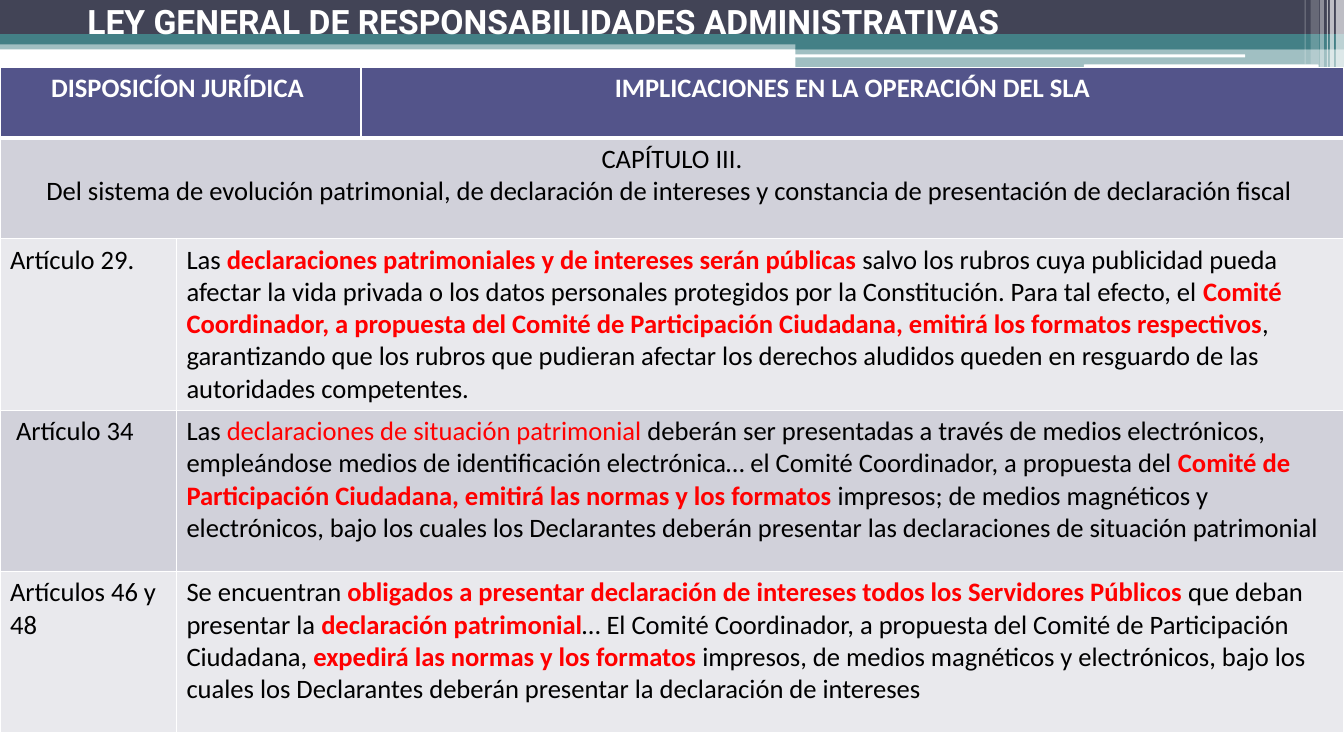
import pptx
import pptx.dml.color
import pptx.enum.shapes
import pptx.enum.text
import pptx.oxml
import pptx.oxml.ns
import pptx.util

RGB = pptx.dml.color.RGBColor
SHAPES = pptx.enum.shapes.MSO_SHAPE
ALIGN = pptx.enum.text.PP_ALIGN
WHITE = RGB(0xFF, 0xFF, 0xFF)
BLACK = RGB(0x00, 0x00, 0x00)
RED = RGB(0xFF, 0x00, 0x00)
SLATE = RGB(0x42, 0x44, 0x56)
TEAL = RGB(0x43, 0x80, 0x86)
INDIGO = RGB(0x53, 0x54, 0x8A)
BAND_DARK = RGB(0xD1, 0xD1, 0xDA)
BAND_LIGHT = RGB(0xE9, 0xE9, 0xED)

UNIT = pptx.util.Inches(0.01)
COLUMNS, ROWS = 1333, 750

BODY = {"name": "Calibri", "size": pptx.util.Pt(19), "bold": False}
STRONG = {**BODY, "bold": True}
TITLE = {"name": "Roboto", "size": pptx.util.Pt(24), "bold": True}
PLAIN = (BODY, BLACK)
HEADING = (STRONG, WHITE)
KEY = (STRONG, RED)
SOFT_KEY = (BODY, RED)

BANDS = [
    (0, 40, 1333, 9, TEAL, 50),
    (0, 0, 1333, 34, SLATE, 100),
    (0, 34, 1333, 10, TEAL, 100),
    (789, 39, 544, 10, TEAL, 100),
    (789, 48, 544, 20, TEAL, 50),
]
STRIPES = [(788, 54, 447, 3), (1075, 64, 233, 4)]
GLINTS = [
    (1325, 8, 68, 65),
    (1319, 4, 68, 65),
    (1316, 1, 68, 60),
    (1309, 4, 68, 40),
    (1300, 8, 64, 20),
    (1294, 1, 64, 30),
]

COLUMN_WIDTHS = [175, 183, 975]
ROW_HEIGHTS = [70, 100, 170, 160, 160]
ROW_FILLS = [INDIGO, BAND_DARK, BAND_LIGHT, BAND_DARK, BAND_LIGHT]
MERGES = [(0, 0, 1), (1, 0, 2), (2, 1, 2), (3, 1, 2), (4, 1, 2)]

HEADINGS = {
    (0, 0): [[("DISPOSICÍON JURÍDICA ", HEADING)]],
    (0, 2): [[("IMPLICACIONES EN LA OPERACIÓN DEL SLA", HEADING)]],
    (1, 0): [
        [(" CAPÍTULO III. ", PLAIN)],
        [("Del sistema de evolución patrimonial, de declaración de intereses y constancia "
          "de presentación de declaración fiscal ", PLAIN)],
    ],
}
ARTICLES = {
    (2, 0): [[("Artículo 29.", PLAIN)]],
    (2, 1): [[
        ("Las ", PLAIN),
        ("declaraciones patrimoniales y de intereses serán públicas ", KEY),
        ("salvo los rubros cuya publicidad pueda afectar la vida privada o los datos "
         "personales protegidos por la Constitución. Para tal efecto, el ", PLAIN),
        ("Comité Coordinador, a propuesta del Comité de Participación Ciudadana, emitirá "
         "los formatos respectivos", KEY),
        (", garantizando que los rubros que pudieran afectar los derechos aludidos queden "
         "en resguardo de las autoridades competentes.", PLAIN),
    ]],
    (3, 0): [[(" Artículo 34", PLAIN)]],
    (3, 1): [[
        ("Las ", PLAIN),
        ("declaraciones de situación patrimonial ", SOFT_KEY),
        ("deberán ser presentadas a través de medios electrónicos, empleándose medios de "
         "identificación electrónica… el Comité Coordinador, a propuesta del ", PLAIN),
        ("Comité de Participación Ciudadana, emitirá las normas y los formatos", KEY),
        (" impresos; de medios magnéticos y electrónicos, bajo los cuales los Declarantes "
         "deberán presentar las declaraciones de situación patrimonial", PLAIN),
    ]],
    (4, 0): [[("Artículos 46 y 48", PLAIN)]],
    (4, 1): [[
        ("Se encuentran ", PLAIN),
        ("obligados a presentar declaración de intereses todos los Servidores Públicos ", KEY),
        ("que deban presentar la ", PLAIN),
        ("declaración patrimonial", KEY),
        ("… El Comité Coordinador, a propuesta del Comité de Participación Ciudadana, ", PLAIN),
        ("expedirá las normas y los formatos ", KEY),
        ("impresos, de medios magnéticos y electrónicos, bajo los cuales los Declarantes "
         "deberán presentar la declaración de intereses", PLAIN),
    ]],
}


def set_values(target, values):
    """Set every attribute of the target named in values."""
    for name, value in values.items():
        setattr(target, name, value)


def write(frame, paragraphs, alignment):
    """Fill a text frame with paragraphs made of (text, (format, colour)) runs."""
    for index, runs in enumerate(paragraphs):
        paragraph = frame.paragraphs[0] if index == 0 else frame.add_paragraph()
        paragraph.alignment = alignment
        for text, (values, colour) in runs:
            run = paragraph.add_run()
            run.text = text
            set_values(run.font, values)
            run.font.color.rgb = colour


def add_bar(slide, box, colour, opacity=100, kind=SHAPES.RECTANGLE):
    """Draw a borderless bar with the given opacity in percent."""
    bar = slide.shapes.add_shape(kind, *[length * UNIT for length in box])
    bar.shadow.inherit = False
    bar.line.fill.background()
    bar.fill.solid()
    bar.fill.fore_color.rgb = colour
    if opacity < 100:
        tint = bar.fill._xPr.find(".//" + pptx.oxml.ns.qn("a:srgbClr"))
        tint.append(pptx.oxml.parse_xml(
            f'<a:alpha {pptx.oxml.ns.nsdecls("a")} val="{opacity * 1000}"/>'))


def add_banner(slide, left, top):
    """Draw the layered banner from its top left corner."""
    for x, y, width, height, colour, opacity in BANDS:
        add_bar(slide, (left + x, top + y, width, height), colour, opacity)
    for x, y, width, height in STRIPES:
        add_bar(slide, (left + x, top + y, width, height), WHITE,
                kind=SHAPES.ROUNDED_RECTANGLE)
    for x, width, height, opacity in GLINTS:
        add_bar(slide, (left + x, top, width, height), WHITE, opacity)


def add_title(slide, box):
    """Write the centred name of the law in its box."""
    frame = slide.shapes.add_textbox(*[length * UNIT for length in box]).text_frame
    set_values(frame, {
        "word_wrap": True, "margin_top": 0, "margin_bottom": 0,
        "vertical_anchor": pptx.enum.text.MSO_ANCHOR.MIDDLE,
    })
    write(frame, [[("LEY GENERAL DE RESPONSABILIDADES ADMINISTRATIVAS", (TITLE, WHITE))]],
          ALIGN.CENTER)


def style_cell(cell, colour, bottom):
    """Fill a cell and give it white borders, with its bottom width in points."""
    cell.fill.solid()
    cell.fill.fore_color.rgb = colour
    properties = cell._tc.get_or_add_tcPr()
    for index, (side, points) in enumerate(zip("LRTB", (1, 1, 1, bottom))):
        properties.insert(index, pptx.oxml.parse_xml(
            f'<a:ln{side} {pptx.oxml.ns.nsdecls("a")} w="{pptx.util.Pt(points)}">'
            f'<a:solidFill><a:srgbClr val="{WHITE}"/></a:solidFill></a:ln{side}>'))


def add_articles(slide, left, top):
    """Build the table of articles from its top left corner."""
    box = (left, top, sum(COLUMN_WIDTHS), sum(ROW_HEIGHTS))
    table = slide.shapes.add_table(len(ROW_HEIGHTS), len(COLUMN_WIDTHS),
                                   *[length * UNIT for length in box]).table
    for column, width in zip(table.columns, COLUMN_WIDTHS):
        column.width = width * UNIT
    for index, (row, height) in enumerate(zip(table.rows, ROW_HEIGHTS)):
        row.height = height * UNIT
        for cell in row.cells:
            style_cell(cell, ROW_FILLS[index], 3 if index == 0 else 1)
    for row, first, last in MERGES:
        table.cell(row, first).merge(table.cell(row, last))
    for texts, alignment in ((HEADINGS, ALIGN.CENTER), (ARTICLES, ALIGN.LEFT)):
        for place, paragraphs in texts.items():
            write(table.cell(*place).text_frame, paragraphs, alignment)


def main():
    """Build and save the slide."""
    deck = pptx.Presentation()
    set_values(deck, {"slide_width": COLUMNS * UNIT, "slide_height": ROWS * UNIT})
    slide = deck.slides.add_slide(deck.slide_layouts[6])
    add_banner(slide, 0, 0)
    add_articles(slide, 0, 67)
    add_title(slide, (0, 0, 1078, 41))
    deck.save("out.pptx")


if __name__ == "__main__":
    main()
